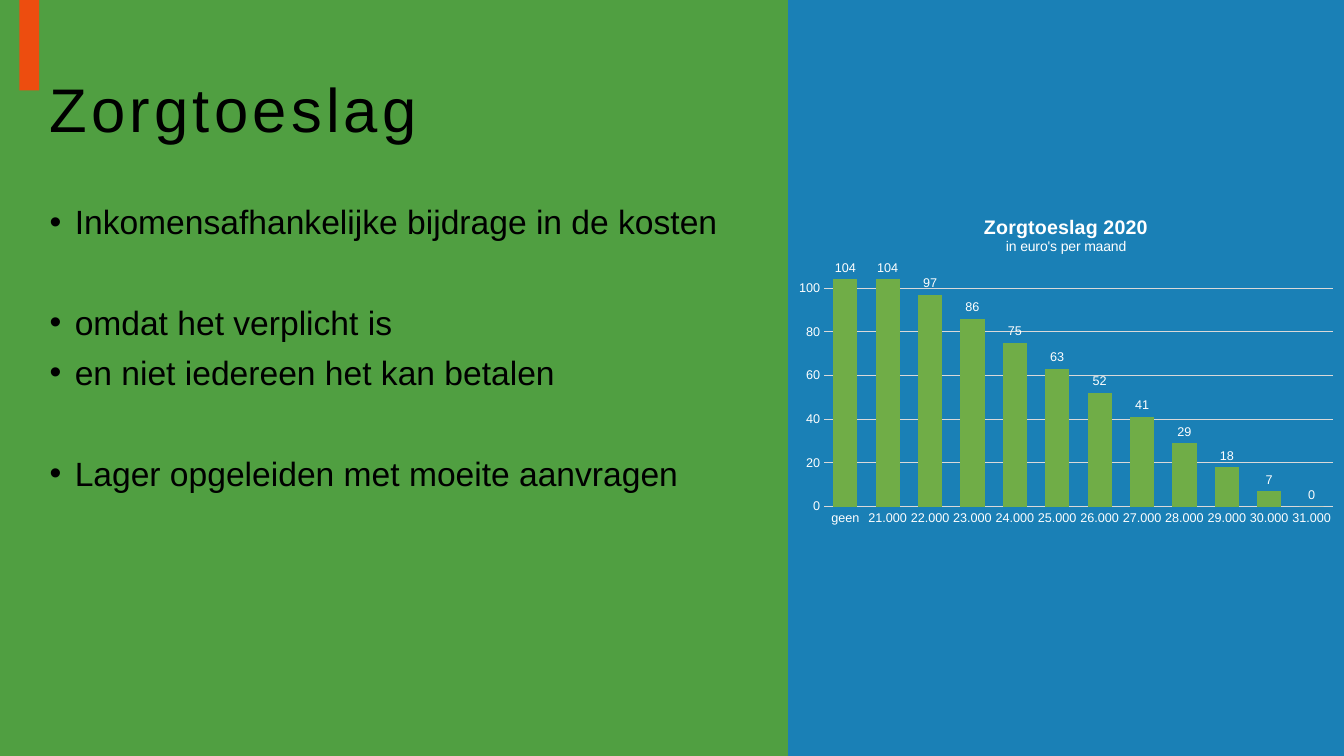
"""Build the Zorgtoeslag slide: bullets on the left, column chart on the right."""
from dataclasses import dataclass

from lxml import etree
from pptx import Presentation, util as u
from pptx.chart.data import CategoryChartData
from pptx.dml.color import RGBColor
from pptx.enum import chart as ch, shapes, text
from pptx.oxml import parse_xml
from pptx.oxml.ns import nsdecls, qn


@dataclass(frozen=True)
class Theme:
    """Colours, font and type sizes of the slide."""
    font: str = "Arial"
    green: str = "258812"
    blue: str = "1A80B6"
    accent: str = "ED4D0F"
    column: str = "70AD47"
    line: str = "D9D9D9"
    dark: str = "000000"
    light: str = "FFFFFF"
    title: float = 44
    body: float = 24
    chart_title: float = 14
    chart_subtitle: float = 10
    label: float = 9


def style_font(font, theme, size, color, bold=False):
    """Set family, size, colour and weight of a font."""
    font.name, font.size, font.bold = theme.font, u.Pt(size), bold
    font.color.rgb = RGBColor.from_string(color)


def write(p, content, theme, size, color, bold=False, spacing=0):
    """Add a formatted run to a paragraph."""
    r = p.add_run()
    r.text = content
    style_font(r.font, theme, size, color, bold)
    if spacing:
        r.font._element.set("spc", str(spacing * 100))


class SlideBuilder:
    """Draws themed elements on one slide."""

    def __init__(self, s, theme):
        """Keep the slide and its theme."""
        self.s, self.theme = s, theme

    def panel(self, box, color, opacity=100):
        """Add a borderless rectangle."""
        sp = self.s.shapes.add_shape(shapes.MSO_SHAPE.RECTANGLE, *map(u.Cm, box))
        sp.shadow.inherit = False
        sp.line.fill.background()
        sp.fill.solid()
        sp.fill.fore_color.rgb = RGBColor.from_string(color)
        if opacity < 100:
            clr = sp._element.spPr.find(qn("a:solidFill"))[0]
            etree.SubElement(clr, qn("a:alpha")).set("val", str(opacity * 1000))

    def text_frame(self, box, anchor):
        """Add a wrapping text box and return its frame."""
        tf = self.s.shapes.add_textbox(*map(u.Cm, box)).text_frame
        tf.word_wrap, tf.vertical_anchor = True, anchor
        return tf

    def title(self, box, content):
        """Add the slide title."""
        p = self.text_frame(box, text.MSO_ANCHOR.MIDDLE).paragraphs[0]
        p.line_spacing = 0.9
        write(p, content, self.theme, self.theme.title, self.theme.dark, spacing=3)

    def bullets(self, box, items):
        """Add bullets from pairs of text and space before."""
        tf = self.text_frame(box, text.MSO_ANCHOR.TOP)
        for i, (content, space) in enumerate(items):
            p = tf.add_paragraph() if i else tf.paragraphs[0]
            p.line_spacing, p.space_before = 0.9, u.Pt(space)
            pPr = p._p.get_or_add_pPr()
            pPr.set("marL", str(u.Cm(0.635)))
            pPr.set("indent", str(u.Cm(-0.635)))
            etree.SubElement(pPr, qn("a:buFont")).set("typeface", self.theme.font)
            etree.SubElement(pPr, qn("a:buChar")).set("char", "•")
            write(p, content, self.theme, self.theme.body, self.theme.dark)

    def columns(self, box, title, subtitle, values, plot):
        """Add a column chart with a two-line title and a fixed plot area."""
        t = self.theme
        data = CategoryChartData()
        data.categories = list(values)
        data.add_series("Series 1", list(values.values()))
        chart = self.s.shapes.add_chart(
            ch.XL_CHART_TYPE.COLUMN_CLUSTERED, *map(u.Cm, box), data).chart
        style_font(chart.font, t, t.label, t.light)
        chart.has_legend = False
        tf = chart.chart_title.text_frame
        write(tf.paragraphs[0], title, t, t.chart_title, t.light, bold=True)
        write(tf.add_paragraph(), subtitle, t, t.chart_subtitle, t.light)
        chart.chart_title.include_in_layout = False
        self.axes(chart)

        bars = chart.plots[0]
        bars.gap_width, bars.overlap, bars.vary_by_categories = 75, 40, False
        fill = bars.series[0].format.fill
        fill.solid()
        fill.fore_color.rgb = RGBColor.from_string(t.column)
        bars.has_data_labels = True
        labels = bars.data_labels
        labels.show_value = True
        labels.position = ch.XL_LABEL_POSITION.OUTSIDE_END
        style_font(labels.font, t, t.label, t.light)

        area = chart._chartSpace.chart.plotArea
        for old in area.findall(qn("c:layout")):
            area.remove(old)
        sizes = "".join(f'<c:{k} val="{v}"/>' for k, v in zip("xywh", plot))
        area.insert(0, parse_xml(
            f'<c:layout {nsdecls("c")}><c:manualLayout><c:layoutTarget val="inner"/>'
            f'<c:xMode val="edge"/><c:yMode val="edge"/>{sizes}'
            '</c:manualLayout></c:layout>'))

    def axes(self, chart):
        """Style both axes and the gridlines."""
        t = self.theme
        cat, val = chart.category_axis, chart.value_axis
        for axis in (cat, val):
            axis.major_tick_mark = axis.minor_tick_mark = ch.XL_TICK_MARK.NONE
            style_font(axis.tick_labels.font, t, t.label, t.light)
        val.minimum_scale, val.maximum_scale, val.major_unit = 0, 110, 20
        val.has_major_gridlines = True
        val.format.line.fill.background()
        for line in (cat.format.line, val.major_gridlines.format.line):
            line.color.rgb = RGBColor.from_string(t.line)
            line.width = u.Pt(0.75)


def main():
    """Compose and save the slide."""
    prs = Presentation()
    prs.slide_width, prs.slide_height = u.Cm(33.87), u.Cm(19.05)
    theme = Theme()
    b = SlideBuilder(prs.slides.add_slide(prs.slide_layouts[6]), theme)
    b.panel((0, 0, 19.86, 19.05), theme.green, opacity=80)
    b.panel((19.86, 0, 14.01, 19.05), theme.blue)
    b.panel((0.49, 0, 0.5, 2.28), theme.accent)
    b.title((1, 1, 32, 3.68), "Zorgtoeslag")
    b.bullets((1, 5.05, 18.3, 12.1), [
        ("Inkomensafhankelijke bijdrage in de kosten", 0),
        ("omdat het verplicht is", 46),
        ("en niet iedereen het kan betalen", 10),
        ("Lager opgeleiden met moeite aanvragen", 46),
    ])
    incomes = ["geen"] + [f"{k}.000" for k in range(21, 32)]
    amounts = [104, 104, 97, 86, 75, 63, 52, 41, 29, 18, 7, 0]
    b.columns((19.86, 5.03, 14.01, 8.41), "Zorgtoeslag 2020", "in euro's per maand",
              dict(zip(incomes, amounts)), plot=(0.065, 0.2, 0.915, 0.72))
    prs.save("out.pptx")


if __name__ == "__main__":
    main()
